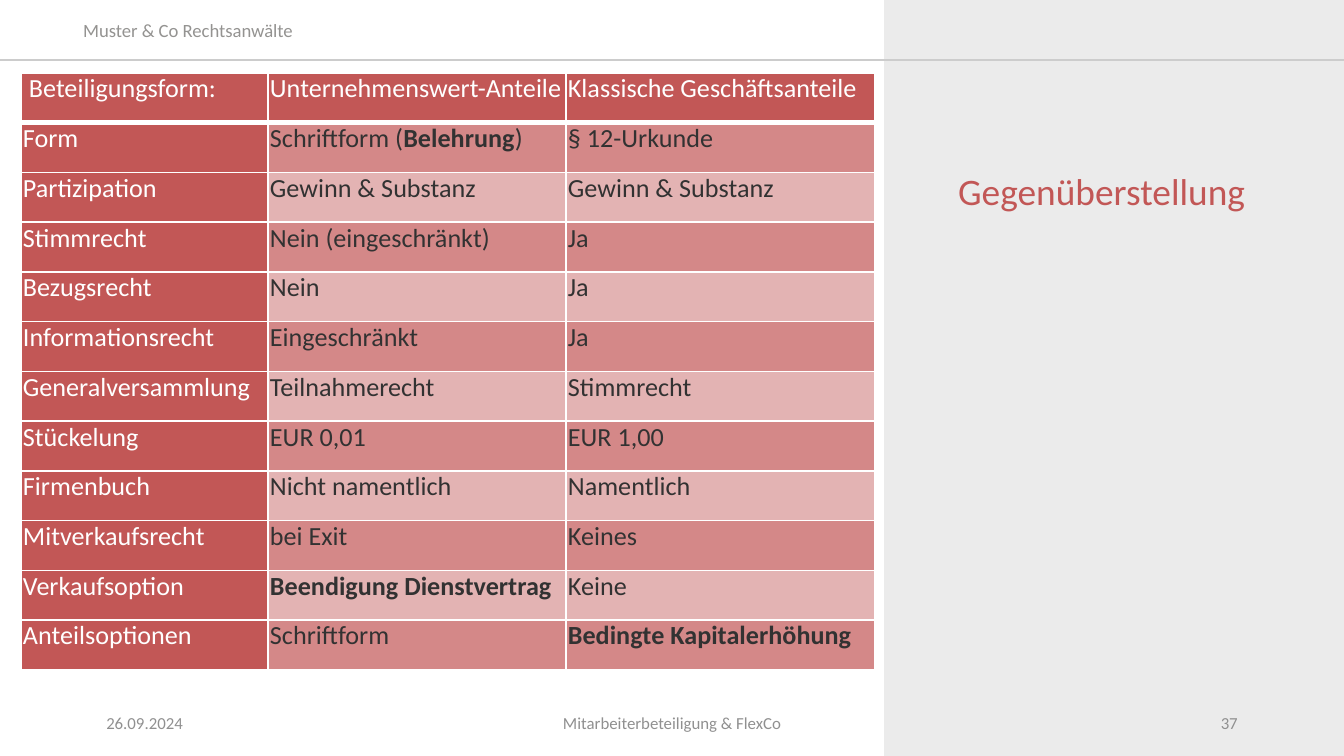
from dataclasses import dataclass

from lxml import etree
from pptx import Presentation
from pptx import util as u
from pptx.dml.color import RGBColor
from pptx.enum import shapes, text
from pptx.oxml import ns

PX = 914400 / 134.4
W, H = 1344, 756
LEFT, CENTER, RIGHT = text.PP_ALIGN.LEFT, text.PP_ALIGN.CENTER, text.PP_ALIGN.RIGHT
TOP, MIDDLE = text.MSO_ANCHOR.TOP, text.MSO_ANCHOR.MIDDLE


@dataclass(frozen=True)
class Theme:
    font: str = "Calibri"
    accent: str = "C25756"
    bands: tuple = ("E3B3B3", "D48888")
    white: str = "FFFFFF"
    dark: str = "323232"
    panel: str = "EBEBEB"
    rule: str = "CCCCCC"
    header: str = "949391"
    footer: str = "909090"
    title_size: float = 20
    table_size: float = 14
    header_size: float = 10
    footer_size: float = 9


T = Theme()

# ** marks the start and end of bold words
ROWS = [
    (" Beteiligungsform:", "Unternehmenswert-Anteile", "Klassische Geschäftsanteile"),
    ("Form", "Schriftform (**Belehrung**)", "§ 12-Urkunde"),
    ("Partizipation", "Gewinn & Substanz", "Gewinn & Substanz"),
    ("Stimmrecht", "Nein (eingeschränkt)", "Ja"),
    ("Bezugsrecht", "Nein", "Ja"),
    ("Informationsrecht", "Eingeschränkt", "Ja"),
    ("Generalversammlung", "Teilnahmerecht", "Stimmrecht"),
    ("Stückelung", "EUR 0,01", "EUR 1,00"),
    ("Firmenbuch", "Nicht namentlich", "Namentlich"),
    ("Mitverkaufsrecht", "bei Exit", "Keines"),
    ("Verkaufsoption", "**Beendigung Dienstvertrag**", "Keine"),
    ("Anteilsoptionen", "Schriftform", "**Bedingte Kapitalerhöhung**"),
]


def px(n):
    return u.Emu(round(n * PX))


def rgb(value):
    return RGBColor.from_string(value)


def style(p, size, color):
    p.font.name, p.font.size = T.font, u.Pt(size)
    p.font.color.rgb = rgb(color)


def add_text(slide, box, words, size, color, align=LEFT, anchor=TOP):
    tf = slide.shapes.add_textbox(*map(px, box)).text_frame
    tf.word_wrap, tf.vertical_anchor = True, anchor
    p = tf.paragraphs[0]
    p.text, p.alignment = words, align
    style(p, size, color)
    return p


def add_borders(cell, bottom):
    tc_pr = cell._tc.get_or_add_tcPr()
    for i, (side, width) in enumerate((("L", 1), ("R", 1), ("T", 1), ("B", bottom))):
        ln = etree.Element(ns.qn(f"a:ln{side}"), w=str(u.Pt(width)))
        fill = etree.SubElement(ln, ns.qn("a:solidFill"))
        etree.SubElement(fill, ns.qn("a:srgbClr"), val=T.white)
        tc_pr.insert(i, ln)


def backdrop(slide, box):
    """Grey side panel and the rule under the header."""
    x, y, w, h = box
    panel_x, rule_y = x + 884, y + 60
    sp = slide.shapes.add_shape(shapes.MSO_SHAPE.RECTANGLE,
                                px(panel_x), px(y), px(x + w - panel_x), px(h))
    sp.shadow.inherit = False
    sp.fill.solid()
    sp.fill.fore_color.rgb = rgb(T.panel)
    sp.line.fill.background()
    rule = slide.shapes.add_connector(shapes.MSO_CONNECTOR.STRAIGHT,
                                      px(x), px(rule_y), px(x + w), px(rule_y))
    rule.line.color.rgb, rule.line.width = rgb(T.rule), u.Pt(0.75)
    etree.SubElement(rule._element.spPr, ns.qn("a:effectLst"))


def footer(slide, box):
    x, y, w, h = box
    parts = [(0, 302, "26.09.2024", LEFT),
             (352, 454, "Mitarbeiterbeteiligung & FlexCo", CENTER),
             (w - 302, 302, "37", RIGHT)]
    for dx, width, words, align in parts:
        add_text(slide, (x + dx, y, width, h), words,
                 T.footer_size, T.footer, align, MIDDLE)


def fill_cell(cell, words, fill, color, bottom):
    cell.margin_left = cell.margin_right = px(2)
    cell.margin_top = cell.margin_bottom = 0
    cell.fill.solid()
    cell.fill.fore_color.rgb = rgb(fill)
    add_borders(cell, bottom)
    p = cell.text_frame.paragraphs[0]
    style(p, T.table_size, color)
    for i, part in enumerate(words.split("**")):
        if part:
            r = p.add_run()
            r.text, r.font.bold = part, i % 2 == 1


def comparison_table(slide, box, widths):
    table = slide.shapes.add_table(len(ROWS), len(widths), *map(px, box)).table
    for column, width in zip(table.columns, widths):
        column.width = px(width)
    for i, row in enumerate(ROWS):
        table.rows[i].height = px(box[3] / len(ROWS))
        for j, words in enumerate(row):
            heading = i == 0 or j == 0
            fill_cell(table.cell(i, j), words,
                      T.accent if heading else T.bands[i % 2],
                      T.white if heading else T.dark,
                      3 if i == 0 else 1)


def comparison_slide(prs, box):
    slide = prs.slides.add_slide(prs.slide_layouts[6])
    x, y, w, h = box
    backdrop(slide, box)
    add_text(slide, (x + 70, y + 12, 254, 36), "Muster & Co Rechtsanwälte",
             T.header_size, T.header)
    title = add_text(slide, (x + 945, y + 167, 345, 263), "Gegenüberstellung",
                     T.title_size, T.accent)
    title.line_spacing = 0.9
    footer(slide, (x + 93, y + 703, w - 186, 40))
    widths = (247, 298, 309)
    comparison_table(slide, (x + 21, y + 73, sum(widths), 597), widths)


def main():
    prs = Presentation()
    prs.slide_width, prs.slide_height = px(W), px(H)
    comparison_slide(prs, (0, 0, W, H))
    prs.save("out.pptx")


if __name__ == "__main__":
    main()
